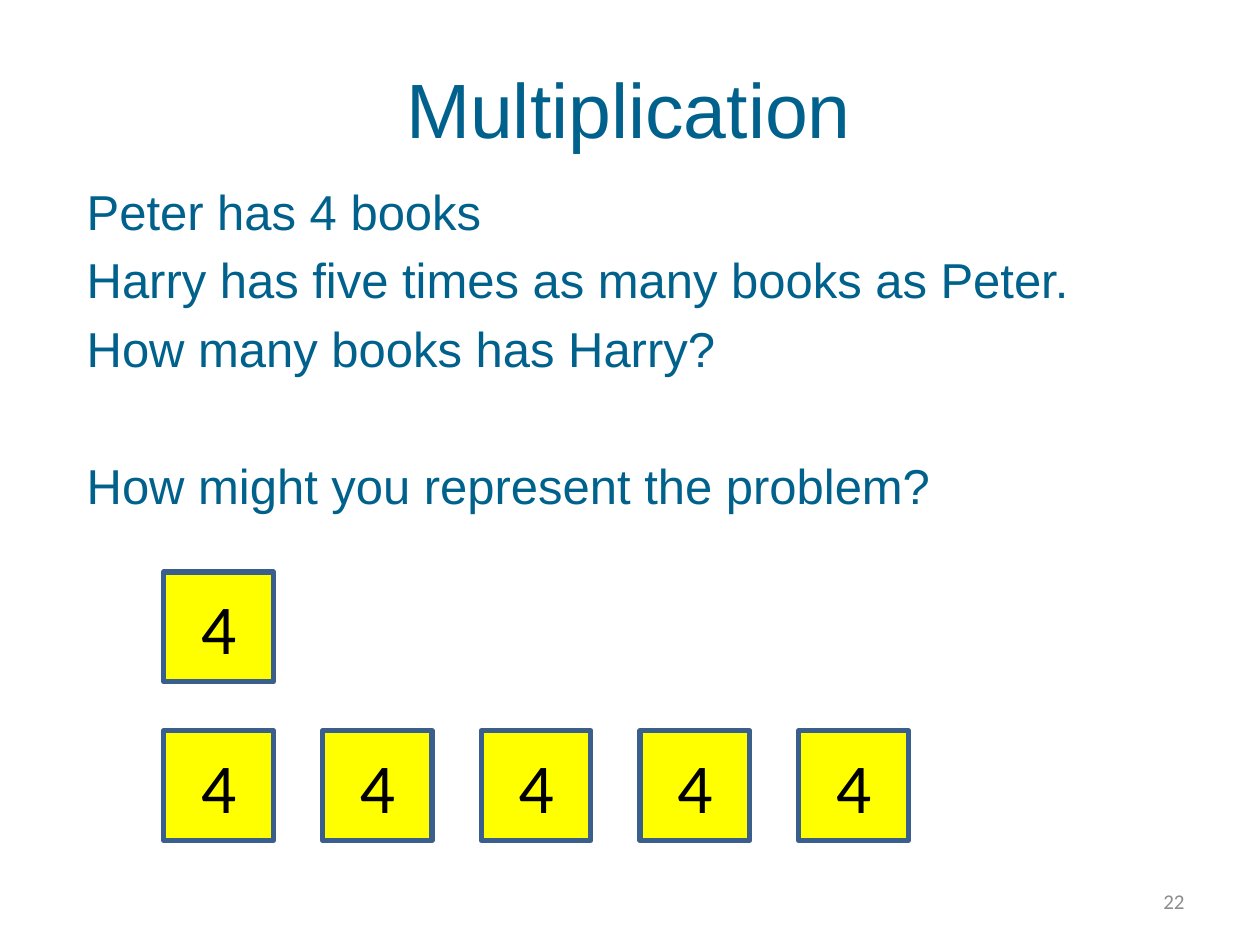
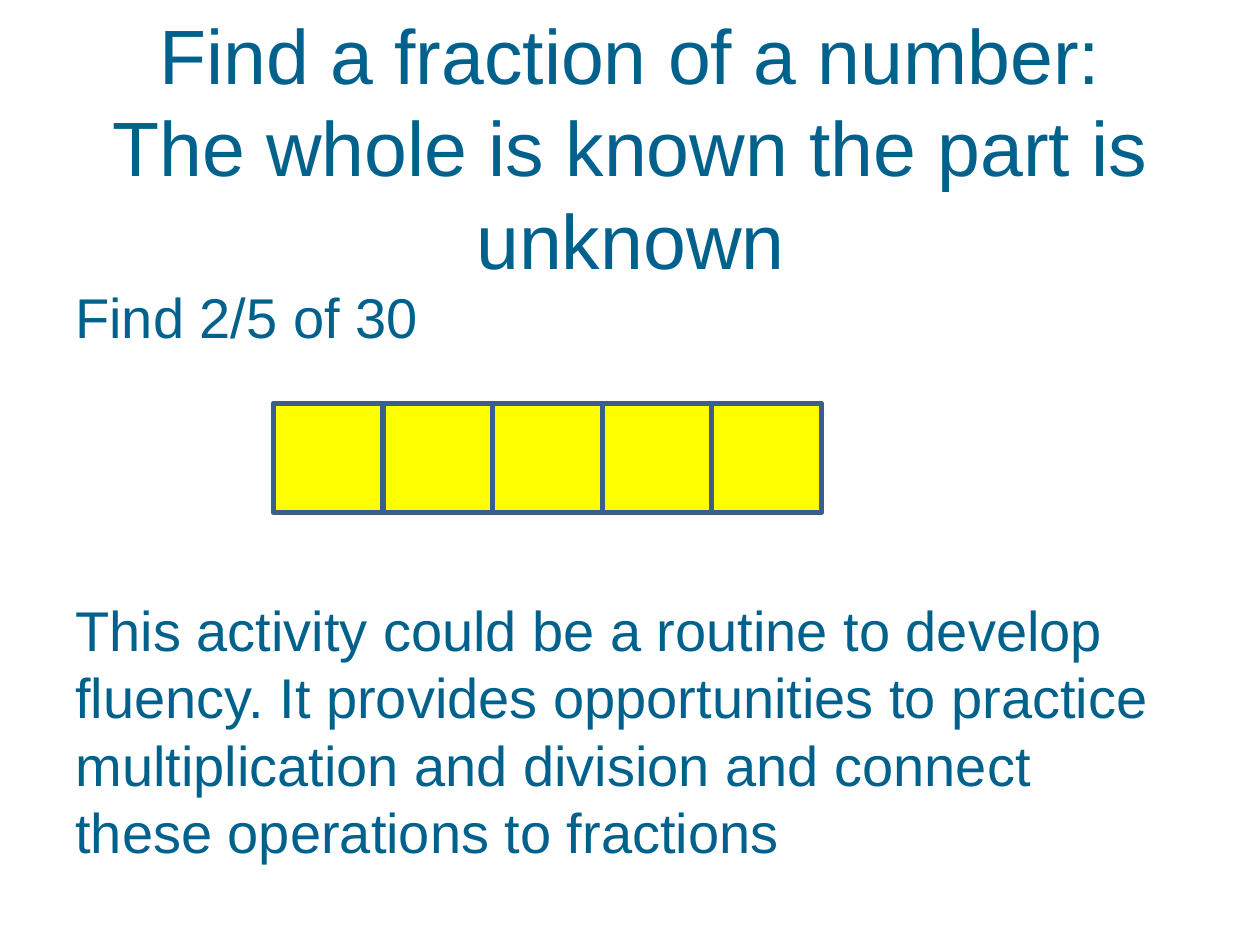
"""Build two slides on multiplication and fractions with bar models."""
from pptx import Presentation
from pptx.dml.color import RGBColor as RGB
from pptx.enum.shapes import MSO_SHAPE as SHAPE
from pptx.enum.text import MSO_ANCHOR as ANCHOR, PP_ALIGN as ALIGN
from pptx.util import Inches, Pt

COLORS = {"text": "00628C", "box": "FFFF00", "edge": "3A5F8C", "digit": "000000", "number": "8C8C8C"}
BOX = 0.87
LEADING = 1.2


def add_text(slide, at, paragraphs, size, color="text", font="Arial", align=ALIGN.LEFT,
             anchor=ANCHOR.TOP, bottom=0.05):
    sp = slide.shapes.add_textbox(*[Inches(v) for v in at])
    tf = sp.text_frame
    tf.word_wrap = True
    tf.vertical_anchor = anchor
    tf.margin_bottom = Inches(bottom)
    for i, (text, blank_lines) in enumerate(paragraphs):
        p = tf.paragraphs[0] if i == 0 else tf.add_paragraph()
        p.alignment = align
        p.line_spacing = Pt(size * LEADING)
        if i:
            p.space_before = Pt(0.2 * size + blank_lines * (LEADING + 0.2) * size)
        for j, line in enumerate(text.split("\n")):
            if j:
                p.add_line_break()
            r = p.add_run()
            r.text = line
            r.font.size = Pt(size)
            r.font.name = font
            r.font.color.rgb = RGB.from_string(COLORS[color])


def add_box(slide, left, top, label=""):
    sp = slide.shapes.add_shape(SHAPE.RECTANGLE, Inches(left), Inches(top), Inches(BOX), Inches(BOX))
    sp.shadow.inherit = False
    sp.fill.solid()
    sp.fill.fore_color.rgb = RGB.from_string(COLORS["box"])
    sp.line.color.rgb = RGB.from_string(COLORS["edge"])
    sp.line.width = Pt(3)
    if label:
        tf = sp.text_frame
        tf.vertical_anchor = ANCHOR.MIDDLE
        p = tf.paragraphs[0]
        p.alignment = ALIGN.CENTER
        r = p.add_run()
        r.text = label
        r.font.size = Pt(40)
        r.font.name = "Calibri"
        r.font.color.rgb = RGB.from_string(COLORS["digit"])


prs = Presentation()
prs.slide_width, prs.slide_height = Inches(10), Inches(7.5)
blank = prs.slide_layouts[6]

s = prs.slides.add_slide(blank)
add_text(s, (0.59, 1.39, 8.66, 2.99), [
    ("Peter has 4 books", 0),
    ("Harry has five times as many books as Peter.", 0),
    ("How many books has Harry?", 0),
    ("How might you represent the problem?", 1),
], 28)
add_text(s, (7.17, 6.95, 2.33, 0.4), [("22", 0)], 12, "number", "Calibri", ALIGN.RIGHT, ANCHOR.MIDDLE)
add_text(s, (0.5, 0.29, 8.98, 1.01), [("Multiplication", 0)], 44,
         align=ALIGN.CENTER, anchor=ANCHOR.BOTTOM, bottom=0.08)
for top, count in [(4.54, 1), (5.8, 5)]:
    for i in range(count):
        add_box(s, 1.3 + 1.26 * i, top, "4")

s = prs.slides.add_slide(blank)
add_text(s, (0.28, 0.3, 9.45, 1.72),
         [("Find a fraction of a number:\nThe whole is known the part is unknown", 0)], 44,
         align=ALIGN.CENTER, anchor=ANCHOR.MIDDLE)
add_text(s, (0.5, 2.19, 9, 4.95), [
    ("Find 2/5 of 30", 0),
    ("This activity could be a routine to develop fluency. It provides opportunities to practice "
     "multiplication and division and connect these operations to fractions", 3),
], 32)
for i in range(5):
    add_box(s, 2.17 + BOX * i, 3.2)

prs.save("out.pptx")
